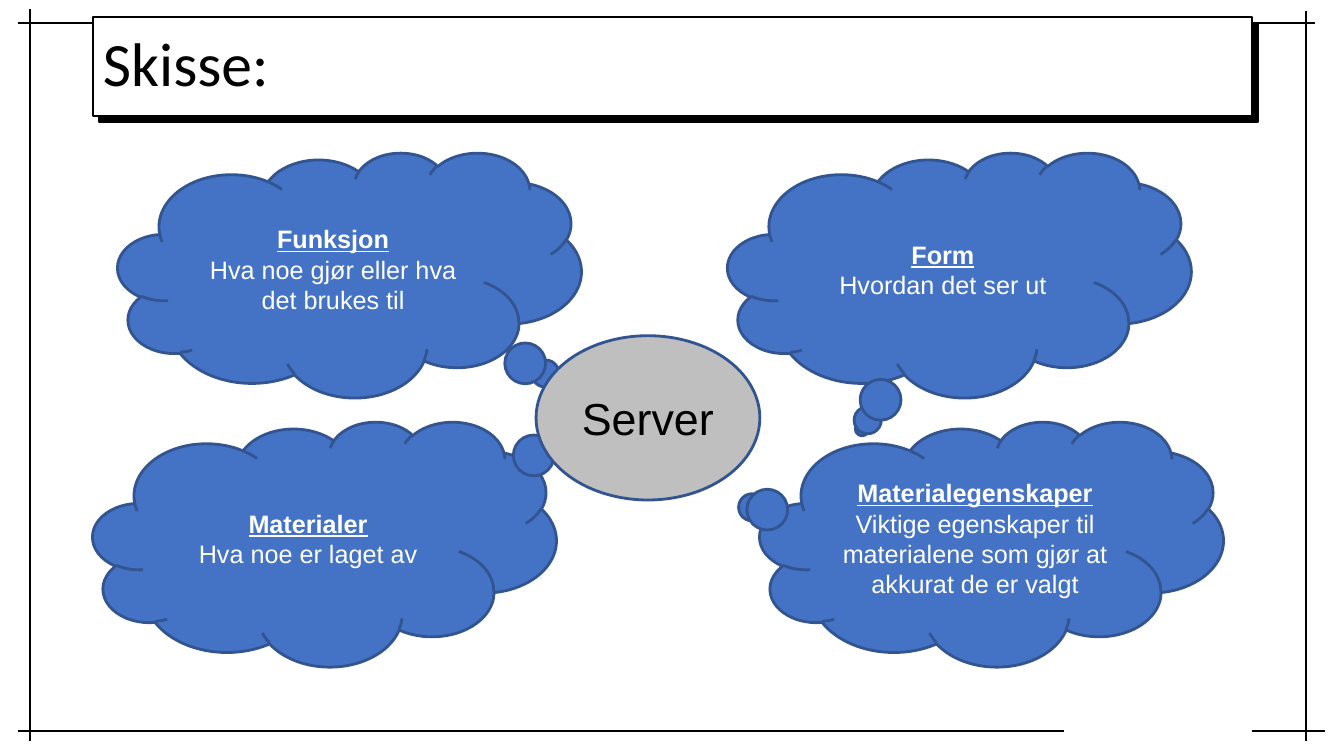
from lxml import etree
from pptx import Presentation
from pptx.dml.color import RGBColor
from pptx.enum.shapes import MSO_CONNECTOR, MSO_SHAPE
from pptx.enum.text import MSO_ANCHOR, MSO_AUTO_SIZE, PP_ALIGN
from pptx.oxml import parse_xml
from pptx.oxml.ns import nsdecls, qn
from pptx.util import Cm, Pt

CLOUD, OVAL = MSO_SHAPE.CLOUD_CALLOUT, MSO_SHAPE.OVAL
STRAIGHT = MSO_CONNECTOR.STRAIGHT
MIDDLE = MSO_ANCHOR.MIDDLE
LEFT, CENTER = PP_ALIGN.LEFT, PP_ALIGN.CENTER
NO_AUTOFIT = MSO_AUTO_SIZE.NONE

COLORS = {
    "black": "000000",
    "white": "FFFFFF",
    "cloud": "4472C4",
    "outline": "325491",
    "hub": "BFBFBF",
}
CLOUD_SIZE = (11.68, 6.17)
UPPER_ROW, LOWER_ROW = 3.84, 10.62

FRAME_LINES = [
    (0.46, 0.58, 33.15, 0.58),
    (0.46, 18.42, 26.82, 18.42),
    (0.76, 18.67, 0.76, 0.23),
    (32.92, 18.67, 32.92, 0.28),
    (31.55, 18.42, 33.38, 18.42),
]
THOUGHTS = [
    (2.97, UPPER_ROW, (0.44, 0.42), "Funksjon",
     "Hva noe gjør eller hva det brukes til"),
    (18.34, UPPER_ROW, (-0.21, 0.63), "Form", "Hvordan det ser ut"),
    (2.34, LOWER_ROW, (0.6, -0.48), "Materialer", "Hva noe er laget av"),
    (19.15, LOWER_ROW, (-0.52, -0.15), "Materialegenskaper",
     "Viktige egenskaper til materialene som gjør at akkurat de er valgt"),
]


class Sketch:
    """Draws the elements of a slide in one shared style."""

    def __init__(self, slide):
        self.slide = slide
        self.shapes = slide.shapes

    def color(self, name):
        return RGBColor.from_string(COLORS[name])

    def paint(self, shape, fill, line, width):
        shape.fill.solid()
        shape.fill.fore_color.rgb = self.color(fill)
        shape.line.color.rgb = self.color(line)
        shape.line.width = Pt(width)

    def label(self, shape, lines, size, color, font="Arial", align=CENTER):
        frame = shape.text_frame
        frame.text = "\n".join(lines)
        frame.word_wrap = True
        frame.auto_size = NO_AUTOFIT
        frame.vertical_anchor = MIDDLE
        for paragraph in frame.paragraphs:
            paragraph.alignment = align
            for run in paragraph.runs:
                run.font.name = font
                run.font.size = Pt(size)
                run.font.color.rgb = self.color(color)
        return frame

    def frame_line(self, x1, y1, x2, y2):
        line = self.shapes.add_connector(STRAIGHT, Cm(x1), Cm(y1), Cm(x2), Cm(y2))
        line.line.color.rgb = self.color("black")
        line.line.width = Pt(1.5)
        etree.SubElement(line._element.spPr, qn("a:effectLst"))

    def title(self, text, left, top, width, height):
        title = self.shapes.title
        title.left, title.top = Cm(left), Cm(top)
        title.width, title.height = Cm(width), Cm(height)
        self.paint(title, "white", "black", 1.5)
        title._element.spPr.append(parse_xml(
            f'<a:effectLst {nsdecls("a")}>'
            f'<a:outerShdw blurRad="0" dist="{Pt(6)}" dir="2700000" algn="tl" rotWithShape="0">'
            f'<a:srgbClr val="{COLORS["black"]}"/></a:outerShdw></a:effectLst>'))
        frame = self.label(title, [text], 44, "black", "Calibri", LEFT)
        frame.paragraphs[0].line_spacing = 0.9
        self.shapes._spTree.append(title._element)

    def bubble(self, kind, left, top, width, height, fill):
        bubble = self.shapes.add_shape(kind, Cm(left), Cm(top), Cm(width), Cm(height))
        bubble.shadow.inherit = False
        self.paint(bubble, fill, "outline", 2)
        return bubble

    def thought(self, left, top, tail, heading, detail):
        cloud = self.bubble(CLOUD, left, top, *CLOUD_SIZE, "cloud")
        cloud.adjustments[0], cloud.adjustments[1] = tail
        frame = self.label(cloud, [heading, detail], 18, "white")
        heading_font = frame.paragraphs[0].runs[0].font
        heading_font.bold = heading_font.underline = True

    def hub(self, text, left, top, width, height):
        oval = self.bubble(OVAL, left, top, width, height, "hub")
        self.label(oval, [text], 32, "black")


def main():
    deck = Presentation()
    deck.slide_width, deck.slide_height = Cm(33.87), Cm(19.05)
    sketch = Sketch(deck.slides.add_slide(deck.slide_layouts[5]))
    for ends in FRAME_LINES:
        sketch.frame_line(*ends)
    sketch.title("Skisse:", 2.34, 0.43, 29.21, 2.49)
    for thought in THOUGHTS:
        sketch.thought(*thought)
    sketch.hub("Server", 13.51, 8.46, 5.64, 4.14)
    deck.save("out.pptx")


if __name__ == "__main__":
    main()
